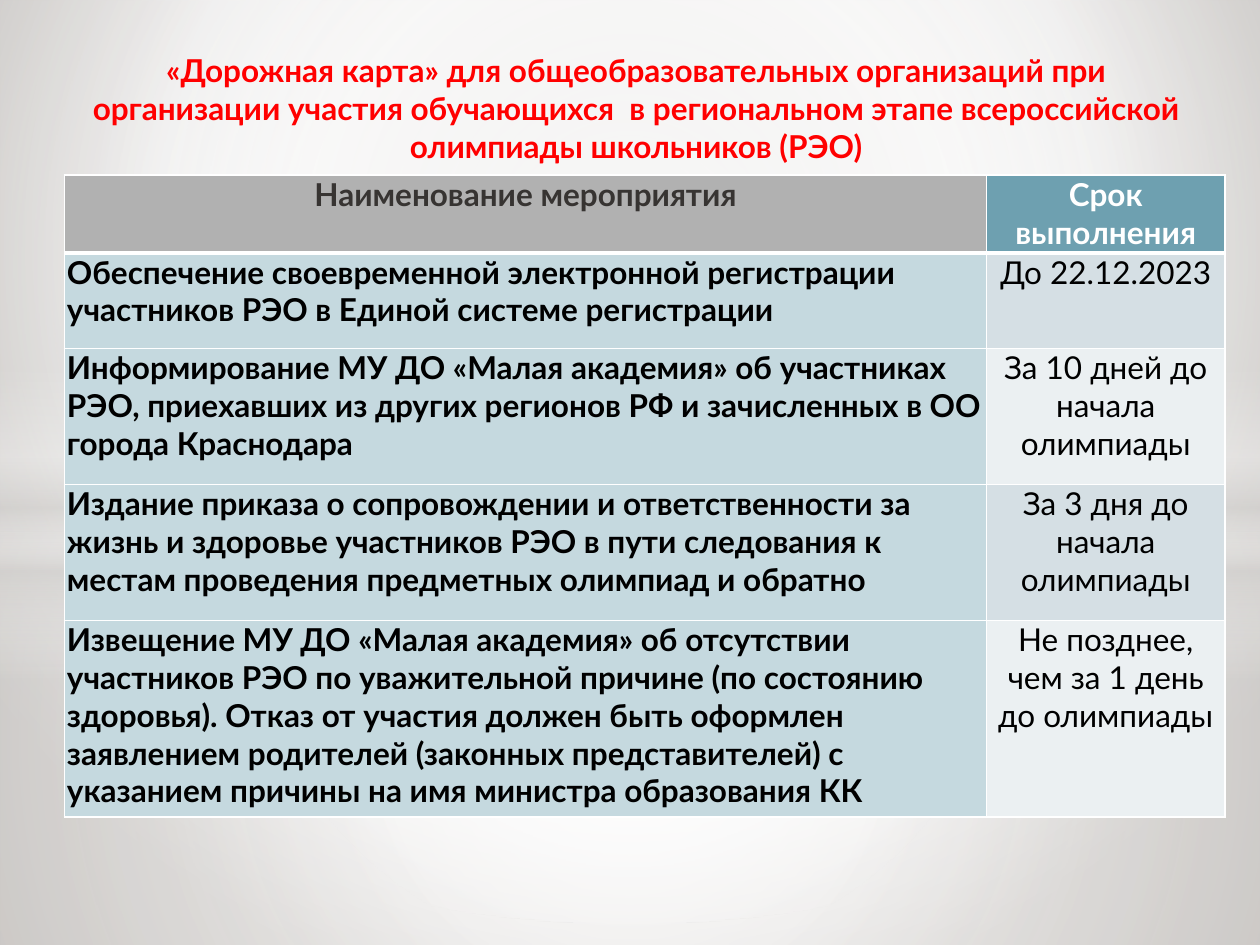
from lxml.etree import SubElement
from pptx import Presentation
from pptx.dml.color import RGBColor
from pptx.enum.shapes import MSO_SHAPE
from pptx.enum.text import MSO_ANCHOR, MSO_AUTO_SIZE, PP_ALIGN
from pptx.oxml.ns import qn
from pptx.util import Cm, Pt

TITLE = ("«Дорожная карта» для общеобразовательных организаций при организации участия "
         "обучающихся  в региональном этапе всероссийской олимпиады школьников (РЭО)")
HEADER = ("Наименование мероприятия", "Срок выполнения")
STEPS = [
    ("Обеспечение своевременной электронной регистрации участников РЭО "
     "в Единой системе регистрации", "До 22.12.2023"),
    ("Информирование МУ ДО «Малая академия» об участниках РЭО, приехавших из других "
     "регионов РФ и зачисленных в ОО города Краснодара", "За 10 дней до начала олимпиады"),
    ("Издание приказа о сопровождении и ответственности за жизнь и здоровье участников РЭО "
     "в пути следования к местам проведения предметных олимпиад и обратно",
     "За 3 дня до начала олимпиады"),
    ("Извещение МУ ДО «Малая академия» об отсутствии участников РЭО по уважительной причине "
     "(по состоянию здоровья). Отказ от участия должен быть оформлен заявлением родителей "
     "(законных представителей) с указанием причины на имя министра образования КК",
     "Не позднее, чем за 1 день до олимпиады"),
]
COLS = (18.59, 4.8)
ROWS = (1.57, 1.93, 2.74, 2.74, 3.96)

THEME = {
    "font": "Lato", "size": 18, "title": "FF0000", "text": "000000", "line": "FFFFFF",
    "header_text": ("373432", "FFFFFF"), "header_fill": ("B1B1B1", "6EA0B0"),
    "step": "C5D9DF", "bands": ("D5DFE4", "EBF0F2"), "thin": 1, "thick": 3,
}

CENTER = (50, 50, 50, 50)
BACKDROP = ([(0, "CDCAC7", 100), (60, "FFFFFF", 100), (100, "AFA9A4", 100)], (20, 10, 20, 60))
LAYERS = [
    (MSO_SHAPE.RECTANGLE, (0, 10.74, 25.4, 8.31),
     [(0, "FFFFFF", 91), (37, "FFFFFF", 76), (100, "D4D2D0", 79)], CENTER),
    (MSO_SHAPE.RECTANGLE, (0, 0, 25.4, 10.74),
     [(0, "FFFFFF", 89), (48, "FFFFFF", 62), (100, "D4D2D0", 79)], CENTER),
    (MSO_SHAPE.RECTANGLE, (0, 7.37, 25.4, 6.35),
     [(0, "FFFFFF", 0), (29, "FFFFFF", 30), (45, "D4D2D0", 40),
      (55, "FFFFFF", 26), (65, "D4D2D0", 60), (100, "FFFFFF", 0)], None),
    (MSO_SHAPE.OVAL, (0, 4.45, 25.4, 14.17),
     [(0, "FFFFFF", 100), (54, "FFFFFF", 0)], CENTER),
]


def set_gradient(fill, owner, stops, focus):
    fill.gradient()
    grad = next(owner.iter(qn("a:gradFill")))
    for child in list(grad):
        grad.remove(child)
    gs_list = SubElement(grad, qn("a:gsLst"))
    for pos, color, opacity in stops:
        gs = SubElement(gs_list, qn("a:gs"), pos=str(pos * 1000))
        clr = SubElement(gs, qn("a:srgbClr"), val=color)
        if opacity < 100:
            SubElement(clr, qn("a:alpha"), val=str(opacity * 1000))
    if focus:
        shade = SubElement(grad, qn("a:path"), path="circle")
        SubElement(shade, qn("a:fillToRect"),
                   {side: str(v * 1000) for side, v in zip("ltrb", focus)})
    else:
        SubElement(grad, qn("a:lin"), ang="5400000", scaled="0")


def write(tf, text, color, bold, align):
    tf.text = text
    p = tf.paragraphs[0]
    p.alignment = align
    font = p.runs[0].font
    font.name, font.size, font.bold = THEME["font"], Pt(THEME["size"]), bold
    font.color.rgb = RGBColor.from_string(color)


def set_borders(cell, row):
    props = cell._tc.get_or_add_tcPr()
    for i, side in enumerate("LRTB"):
        thick = (row, side) in ((0, "B"), (1, "T"))
        width = Pt(THEME["thick" if thick else "thin"])
        ln = SubElement(props, qn(f"a:ln{side}"), w=str(width))
        SubElement(SubElement(ln, qn("a:solidFill")), qn("a:srgbClr"), val=THEME["line"])
        props.insert(i, ln)


def cell_style(row, col):
    if row == 0:
        return THEME["header_fill"][col], THEME["header_text"][col], True, PP_ALIGN.CENTER
    if col == 0:
        return THEME["step"], THEME["text"], True, PP_ALIGN.LEFT
    return THEME["bands"][(row - 1) % 2], THEME["text"], False, PP_ALIGN.CENTER


def add_backdrop(s):
    set_gradient(s.background.fill, s._element, *BACKDROP)
    for kind, box, stops, focus in LAYERS:
        sp = s.shapes.add_shape(kind, *map(Cm, box))
        sp.shadow.inherit = False
        sp.line.fill.background()
        set_gradient(sp.fill, sp._element, stops, focus)


def add_title(s):
    sp = s.shapes.title
    s.shapes._spTree.append(sp._element)
    sp.left, sp.top, sp.width, sp.height = map(Cm, (0.89, 0.91, 23.39, 2.39))
    tf = sp.text_frame
    tf.word_wrap, tf.auto_size = True, MSO_AUTO_SIZE.NONE
    tf.vertical_anchor = MSO_ANCHOR.TOP
    tf.margin_left, tf.margin_right = Cm(0.73), Cm(0.25)
    write(tf, TITLE, THEME["title"], True, PP_ALIGN.CENTER)


def add_schedule(s):
    data = [HEADER, *STEPS]
    table = s.shapes.add_table(len(data), len(COLS), Cm(1.3), Cm(3.53),
                               Cm(sum(COLS)), Cm(sum(ROWS))).table
    table.horz_banding = False
    for column, width in zip(table.columns, COLS):
        column.width = Cm(width)
    for i, (row, height) in enumerate(zip(table.rows, ROWS)):
        row.height = Cm(height)
        for j, cell in enumerate(row.cells):
            fill, color, bold, align = cell_style(i, j)
            cell.margin_left = cell.margin_right = Cm(0.05)
            cell.margin_top = cell.margin_bottom = 0
            cell.vertical_anchor = MSO_ANCHOR.TOP
            write(cell.text_frame, data[i][j], color, bold, align)
            set_borders(cell, i)
            cell.fill.solid()
            cell.fill.fore_color.rgb = RGBColor.from_string(fill)


def main():
    prs = Presentation()
    prs.slide_width, prs.slide_height = Cm(25.4), Cm(19.05)
    s = prs.slides.add_slide(prs.slide_layouts[5])
    add_backdrop(s)
    add_title(s)
    add_schedule(s)
    prs.save("out.pptx")


if __name__ == "__main__":
    main()
